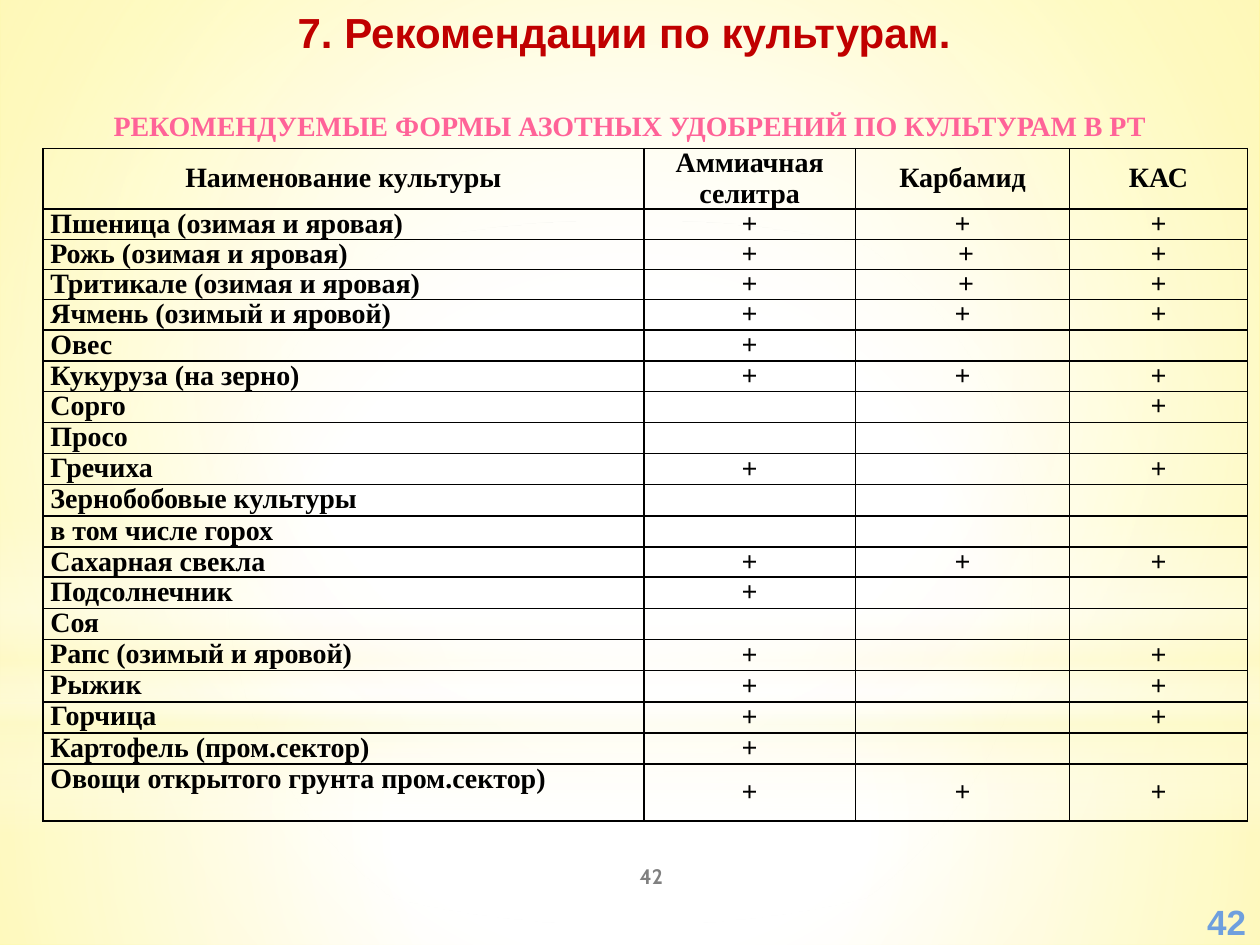
"""Build the slide with recommended nitrogen fertilizer forms by crop."""
from pptx import Presentation
from pptx.dml.color import RGBColor
from pptx.enum.shapes import MSO_SHAPE
from pptx.enum.text import MSO_ANCHOR, PP_ALIGN
from pptx.oxml import parse_xml
from pptx.oxml.ns import nsdecls, qn
from pptx.util import Inches, Pt

COLORS = {
    "white": "FFFFFF",
    "cream": "FEFAC9",
    "yellow": "FFF577",
    "black": "000000",
    "gray": "808080",
    "red": "C00000",
    "plum": "7E324C",
    "pink": "FF6398",
    "rose": "EF5B8D",
    "outline": "9E677A",
    "navy": "2F4D71",
    "blue": "6E9FDE",
    "ice": "F1F5FC",
}
CENTER = (50, 50, 50, 50)


def set_gradient(fill, properties, stops, focus=None):
    """Put a circular gradient with a focus, or a vertical one, in place of the fill."""
    fill.background()
    stop_xml = "".join(
        f'<a:gs pos="{position * 1000}"><a:srgbClr val="{COLORS[color]}">'
        f'<a:alpha val="{alpha * 1000}"/></a:srgbClr></a:gs>'
        for position, color, alpha in stops
    )
    direction = '<a:lin ang="5400000" scaled="0"/>'
    if focus:
        sides = " ".join(f'{side}="{value * 1000}"' for side, value in zip("ltrb", focus))
        direction = f'<a:path path="circle"><a:fillToRect {sides}/></a:path>'
    gradient = parse_xml(
        f'<a:gradFill {nsdecls("a")} rotWithShape="1"><a:gsLst>{stop_xml}</a:gsLst>{direction}</a:gradFill>'
    )
    properties.replace(properties.find(qn("a:noFill")), gradient)


def set_values(target, values):
    """Set each attribute of the target from a dict."""
    for name, value in values.items():
        setattr(target, name, value)


presentation = Presentation()
set_values(presentation, {"slide_width": Inches(10), "slide_height": Inches(7.5)})
slide = presentation.slides.add_slide(presentation.slide_layouts[6])

background_fill = slide.background.fill
background_fill.background()
set_gradient(
    background_fill,
    slide.element.find(".//" + qn("p:bgPr")),
    [(0, "white", 100), (42, "white", 100), (100, "yellow", 100)],
    (24, 44, 24, 12),
)

glows = [
    (MSO_SHAPE.RECTANGLE, 5.58, 1.92, CENTER, [(0, "white", 91), (37, "white", 76), (100, "cream", 79)]),
    (MSO_SHAPE.RECTANGLE, 0, 5.58, CENTER, [(0, "white", 89), (48, "white", 62), (100, "cream", 79)]),
    (MSO_SHAPE.RECTANGLE, 4.12, 2.5, None, [
        (0, "white", 0), (29, "white", 30), (45, "cream", 40),
        (55, "white", 26), (65, "cream", 60), (100, "white", 0),
    ]),
    (MSO_SHAPE.OVAL, 1.75, 5.58, CENTER, [(0, "white", 100), (56, "white", 0)]),
]
for kind, top, height, focus, stops in glows:
    shape = slide.shapes.add_shape(kind, 0, Inches(top), presentation.slide_width, Inches(height))
    shape.shadow.inherit = False
    shape.line.fill.background()
    set_gradient(shape.fill, shape.element.spPr, stops, focus)

crops = [
    ("Наименование культуры", "Аммиачная селитра", "Карбамид", "КАС"),
    ("Пшеница (озимая и яровая)", "+", "+", "+"),
    ("Рожь (озимая и яровая)", "+", " +", "+"),
    ("Тритикале (озимая и яровая)", "+", " +", "+"),
    ("Ячмень (озимый и яровой)", "+", "+", "+"),
    ("Овес", "+", "", ""),
    ("Кукуруза (на зерно)", "+", "+", "+"),
    ("Сорго", "", "", "+"),
    ("Просо", "", "", ""),
    ("Гречиха", "+", "", "+"),
    ("Зернобобовые культуры", "", "", ""),
    ("в том числе горох", "", "", ""),
    ("Сахарная свекла", "+", "+", "+"),
    ("Подсолнечник", "+", "", ""),
    ("Соя", "", "", ""),
    ("Рапс (озимый и яровой)", "+", "", "+"),
    ("Рыжик", "+", "", "+"),
    ("Горчица", "+", "", "+"),
    ("Картофель (пром.сектор)", "+", "", ""),
    ("Овощи открытого грунта пром.сектор)", "+", "+", "+"),
]
column_widths = [4.77, 1.68, 1.7, 1.41]
row_heights = [0.45] + [0.23] * (len(crops) - 2) + [0.45]
table = slide.shapes.add_table(
    len(crops), len(column_widths), Inches(0.34), Inches(1.18),
    Inches(sum(column_widths)), Inches(sum(row_heights)),
).table
set_values(table, {"first_row": False, "horz_banding": False})
for column, width in zip(table.columns, column_widths):
    column.width = Inches(width)

cell_font = {"name": "Times New Roman", "size": Pt(16), "bold": True}
for row_index, (row, height) in enumerate(zip(table.rows, row_heights)):
    row.height = Inches(height)
    for column_index, (cell, text) in enumerate(zip(row.cells, crops[row_index])):
        crop_name = row_index > 0 and column_index == 0
        set_values(cell, {
            "margin_left": Inches(0.06), "margin_right": Inches(0.06),
            "margin_top": 0, "margin_bottom": 0,
            "vertical_anchor": MSO_ANCHOR.TOP if crop_name else MSO_ANCHOR.MIDDLE,
        })
        cell.fill.background()
        for position, side in enumerate("LRTB"):
            cell_properties = cell._tc.get_or_add_tcPr()
            cell_properties.insert(position, parse_xml(
                f'<a:ln{side} {nsdecls("a")} w="12700"><a:solidFill>'
                f'<a:srgbClr val="{COLORS["black"]}"/></a:solidFill></a:ln{side}>'
            ))
        paragraph = cell.text_frame.paragraphs[0]
        paragraph.alignment = PP_ALIGN.LEFT if crop_name else PP_ALIGN.CENTER
        paragraph.line_spacing = 0.97
        if text:
            run = paragraph.add_run()
            run.text = text
            set_values(run.font, cell_font)
            run.font.color.rgb = RGBColor.from_string(COLORS["black"])
        else:
            paragraph._p.append(parse_xml(
                f'<a:endParaRPr {nsdecls("a")} sz="1600" b="1"><a:latin typeface="Times New Roman"/></a:endParaRPr>'
            ))

heading_stops = [(0, "plum", 100), (43, "pink", 100), (48, "rose", 100), (100, "plum", 100)]
number_stops = [(0, "navy", 100), (78, "blue", 100), (100, "ice", 100)]
labels = [
    ("42", (4.17, 6.75, 2, 0.4), MSO_ANCHOR.MIDDLE, 0.05, "Cabin", 12, "gray"),
    ("РЕКОМЕНДУЕМЫЕ ФОРМЫ АЗОТНЫХ УДОБРЕНИЙ ПО КУЛЬТУРАМ В РТ", (0, 0.68, 10, 0.5),
     MSO_ANCHOR.TOP, 0.18, "Times New Roman", 16, heading_stops),
    ("7. Рекомендации по культурам. ", (0, 0, 10, 0.5), MSO_ANCHOR.TOP, 0.05, "Arial", 24, "red"),
    ("42", (9.47, 7.12, 0.53, 0.38), MSO_ANCHOR.MIDDLE, 0.05, "Arial", 20, number_stops),
]
for text, place, anchor, margin_top, font_name, size, color in labels:
    text_frame = slide.shapes.add_textbox(*map(Inches, place)).text_frame
    set_values(text_frame, {"word_wrap": True, "vertical_anchor": anchor, "margin_top": Inches(margin_top)})
    paragraph = text_frame.paragraphs[0]
    paragraph.alignment = PP_ALIGN.CENTER
    run = paragraph.add_run()
    run.text = text
    set_values(run.font, {"name": font_name, "size": Pt(size), "bold": True})
    if isinstance(color, str):
        run.font.color.rgb = RGBColor.from_string(COLORS[color])
    else:
        set_gradient(run.font.fill, run.font._element, color)
    if color is heading_stops:
        run.font._element.insert(0, parse_xml(
            f'<a:ln {nsdecls("a")} w="9017"><a:solidFill>'
            f'<a:srgbClr val="{COLORS["outline"]}"/></a:solidFill></a:ln>'
        ))

presentation.save("out.pptx")
